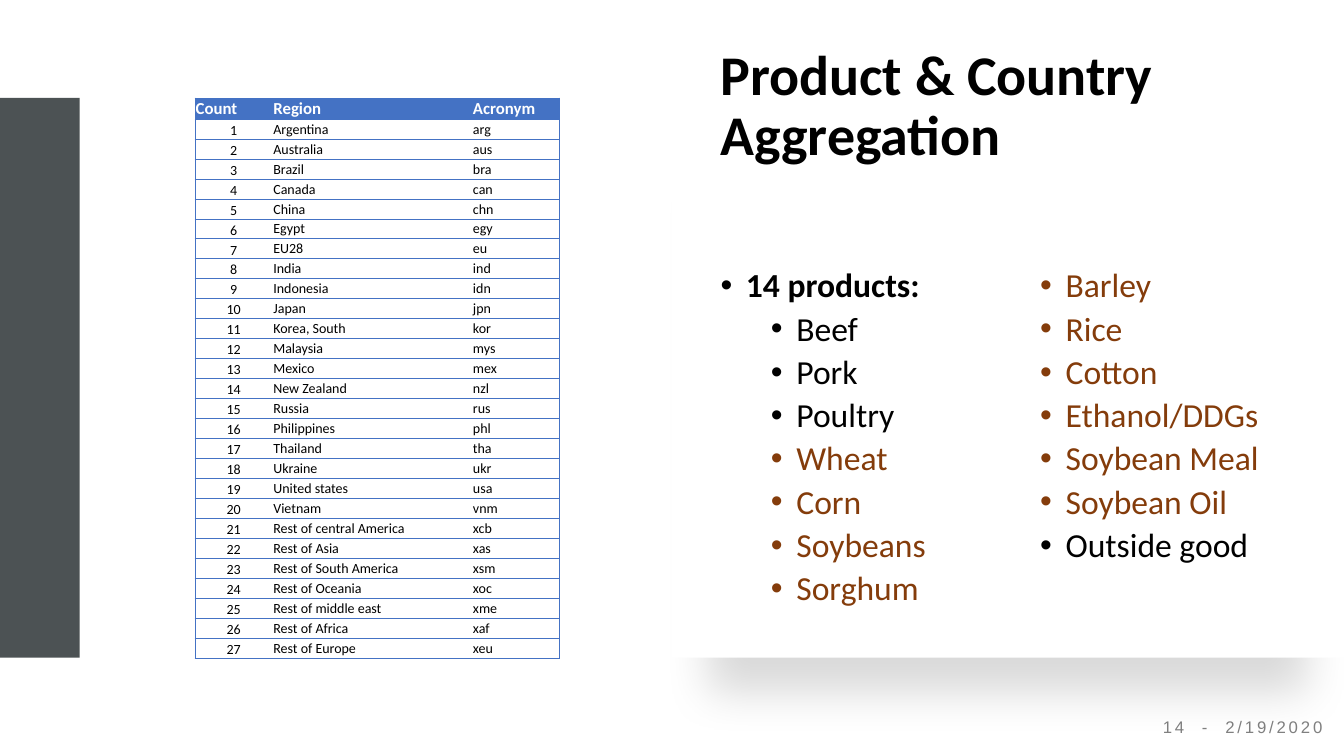
from lxml import etree
from pptx import Presentation
from pptx import util as u
from pptx.dml.color import RGBColor
from pptx.enum import shapes, text
from pptx.oxml.ns import qn

COLORS = {"black": "000000", "white": "FFFFFF", "slate": "4C5254",
          "blue": "4472C4", "brown": "843C0B", "gray": "808080"}
REGIONS = [
    ("Argentina", "arg"), ("Australia", "aus"), ("Brazil", "bra"),
    ("Canada", "can"), ("China", "chn"), ("Egypt", "egy"), ("EU28", "eu"),
    ("India", "ind"), ("Indonesia", "idn"), ("Japan", "jpn"),
    ("Korea, South", "kor"), ("Malaysia", "mys"), ("Mexico", "mex"),
    ("New Zealand", "nzl"), ("Russia", "rus"), ("Philippines", "phl"),
    ("Thailand", "tha"), ("Ukraine", "ukr"), ("United states", "usa"),
    ("Vietnam", "vnm"), ("Rest of central America", "xcb"),
    ("Rest of Asia", "xas"), ("Rest of South America", "xsm"),
    ("Rest of Oceania", "xoc"), ("Rest of middle east", "xme"),
    ("Rest of Africa", "xaf"), ("Rest of Europe", "xeu")]
MEATS = ["Beef", "Pork", "Poultry"]
CROPS = ["Wheat", "Corn", "Soybeans", "Sorghum", "Barley", "Rice", "Cotton",
         "Ethanol/DDGs", "Soybean Meal", "Soybean Oil"]


def rgb(name):
    return RGBColor.from_string(COLORS[name])


def sub(parent, tag, **attrs):
    return etree.SubElement(parent, qn(tag), attrs)


def write(para, words, size=24, color="black", bold=False, font="Calibri",
          align=text.PP_ALIGN.LEFT, line=None, before=0, indent=None, level=0,
          track=None):
    run = para.add_run()
    run.text = words
    run.font.size = u.Pt(size)
    run.font.bold = bold
    run.font.name = font
    run.font.color.rgb = rgb(color)
    para.alignment = align
    para.level = level
    para.space_before = u.Pt(before)
    if line:
        para.line_spacing = line
    if track:
        run.font._element.set("spc", str(track * 100))
    if indent:
        props = para._p.get_or_add_pPr()
        props.set("marL", str(u.Cm(indent)))
        props.set("indent", str(u.Cm(-0.64)))
        sub(props, "a:buFont", typeface="Arial")
        sub(props, "a:buChar", char="•")


class Deck:
    font = "Calibri"
    line = 0.9

    def __init__(self, slide):
        self.slide = slide

    def rect(self, *box, fill, shadow=False):
        shape = self.slide.shapes.add_shape(
            shapes.MSO_SHAPE.RECTANGLE, *map(u.Cm, box))
        shape.fill.solid()
        shape.fill.fore_color.rgb = rgb(fill)
        shape.line.fill.background()
        shape.shadow.inherit = False
        if shadow:
            glow = sub(shape._element.spPr.find(qn("a:effectLst")),
                       "a:outerShdw", blurRad=str(u.Pt(32)),
                       dist=str(u.Pt(25)), dir="5400000", sx="89000",
                       sy="89000", rotWithShape="0")
            tone = sub(glow, "a:srgbClr", val=COLORS["black"])
            sub(tone, "a:alpha", val="15000")

    def label(self, *box, paras, middle=True, fill=None, cols=1):
        shape = self.slide.shapes.add_textbox(*map(u.Cm, box))
        if fill:
            shape.fill.solid()
            shape.fill.fore_color.rgb = rgb(fill)
        frame = shape.text_frame
        frame.word_wrap = True
        frame.vertical_anchor = (text.MSO_ANCHOR.MIDDLE if middle
                                 else text.MSO_ANCHOR.TOP)
        if cols > 1:
            frame._txBody.bodyPr.set("numCol", str(cols))
        for i, (words, style) in enumerate(paras):
            para = frame.add_paragraph() if i else frame.paragraphs[0]
            write(para, words, **{"font": self.font, "line": self.line, **style})

    def edges(self, cell, sides):
        props = cell._tc.get_or_add_tcPr()
        for i, side in enumerate("LRTB"):
            edge = etree.Element(qn("a:ln" + side), w=str(u.Pt(0.5)))
            if side in sides:
                sub(sub(edge, "a:solidFill"), "a:srgbClr", val=COLORS["blue"])
            else:
                sub(edge, "a:noFill")
            props.insert(i, edge)

    def table(self, left, top, height, widths, rows):
        box = map(u.Cm, (left, top, sum(widths), height))
        grid = self.slide.shapes.add_table(len(rows), len(widths), *box).table
        grid.horz_banding = False
        for col, width in zip(grid.columns, widths):
            col.width = u.Cm(width)
        for r, row in enumerate(rows):
            grid.rows[r].height = u.Cm(height / len(rows))
            for c, words in enumerate(row):
                cell = grid.cell(r, c)
                cell.margin_left = cell.margin_right = u.Cm(0.02)
                cell.margin_top, cell.margin_bottom = u.Cm(0.02), 0
                low = r == 0 or c == 0
                cell.vertical_anchor = (text.MSO_ANCHOR.BOTTOM if low
                                        else text.MSO_ANCHOR.MIDDLE)
                cell.fill.solid()
                cell.fill.fore_color.rgb = rgb("white" if r else "blue")
                self.edges(cell, "TB" + {0: "L", len(row) - 1: "R"}.get(c, ""))
                mid = r > 0 and c == 0
                write(cell.text_frame.paragraphs[0], words, font=self.font,
                      size=10 if r else 12, bold=r == 0,
                      color="black" if r else "white",
                      align=text.PP_ALIGN.CENTER if mid else text.PP_ALIGN.LEFT)


def main():
    prs = Presentation()
    prs.slide_width, prs.slide_height = u.Cm(33.87), u.Cm(19.05)
    deck = Deck(prs.slides.add_slide(prs.slide_layouts[6]))

    # Footer
    deck.label(28.78, 17.96, 5.08, 0.76, paras=[("14  -  2/19/2020", dict(
        size=12, color="gray", font="Arial", before=10, track=2,
        align=text.PP_ALIGN.CENTER))])

    # Side bar and raised panel
    deck.rect(0, 2.47, 2.01, 14.1, fill="slate")
    deck.rect(16.92, 2.47, 16.95, 14.1, fill="white", shadow=True)

    # Title
    deck.label(17.91, 0.84, 14.07, 3.73, paras=[
        ("Product & Country Aggregation", dict(size=40, bold=True))])

    # Products in two columns
    item = dict(before=5, indent=1.91, level=1)
    goods = [("14 products:", dict(bold=True, before=10, indent=0.64))]
    goods += [(name, item) for name in MEATS]
    goods += [(name, {**item, "color": "brown"}) for name in CROPS]
    goods.append(("Outside good", item))
    deck.label(17.91, 6.65, 14.07, 9.45, paras=goods, middle=False,
               fill="white", cols=2)

    # Regions
    rows = [("Count", "Region", "Acronym")]
    rows += [(str(n), *pair) for n, pair in enumerate(REGIONS, 1)]
    deck.table(4.91, 2.47, 14.1, [1.96, 5.03, 2.2], rows)

    prs.save("out.pptx")


if __name__ == "__main__":
    main()
